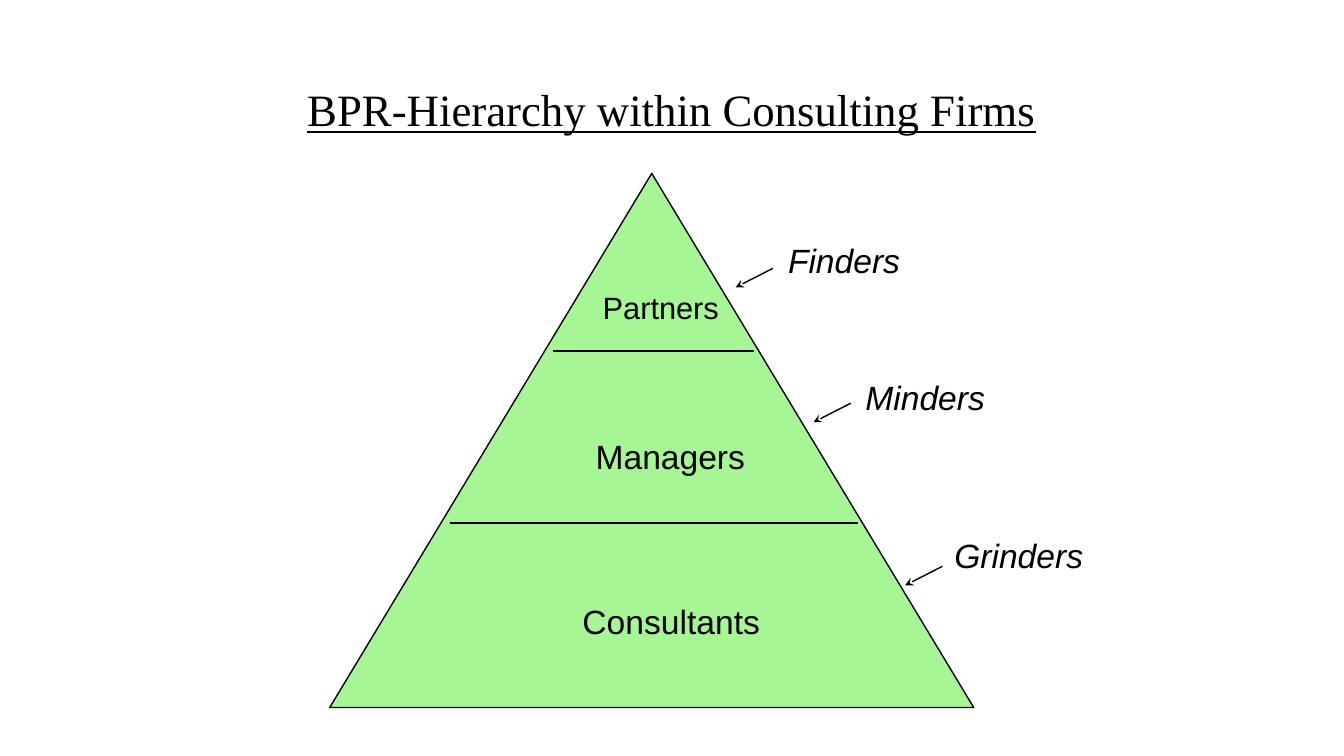
from pptx import Presentation
from pptx.dml.color import RGBColor
from pptx.enum.shapes import MSO_CONNECTOR, MSO_SHAPE
from pptx.enum.text import MSO_ANCHOR, MSO_AUTO_SIZE, PP_ALIGN
from pptx.oxml.ns import qn
from pptx.util import Cm, Pt
from lxml.etree import SubElement

COLORS = {"ink": "000000", "pyramid": "A6F695", "paper": "FFFFFF"}


def write(sp, text, size=24, font="Arial", italic=False, underline=False,
          align=PP_ALIGN.LEFT, anchor=MSO_ANCHOR.TOP, wrap=False,
          fit=MSO_AUTO_SIZE.SHAPE_TO_FIT_TEXT):
    tf = sp.text_frame
    tf.word_wrap, tf.auto_size, tf.vertical_anchor = wrap, fit, anchor
    p = tf.paragraphs[0]
    p.alignment = align
    r = p.add_run()
    r.text = text
    r.font.name, r.font.size = font, Pt(size)
    r.font.italic, r.font.underline = italic, underline
    r.font.color.rgb = RGBColor.from_string(COLORS["ink"])


def add_line(shapes, x1, y1, x2, y2, arrow=False):
    line = shapes.add_connector(MSO_CONNECTOR.STRAIGHT, Cm(x1), Cm(y1), Cm(x2), Cm(y2))
    line.line.width = Pt(1)
    line.line.color.rgb = RGBColor.from_string(COLORS["ink"])
    if arrow:
        SubElement(line.line._get_or_add_ln(), qn("a:tailEnd"), type="stealth")
    SubElement(line._element.spPr, qn("a:effectLst"))


prs = Presentation()
prs.slide_width, prs.slide_height = Cm(33.87), Cm(19.05)
slide = prs.slides.add_slide(prs.slide_layouts[5])
slide.background.fill.solid()
slide.background.fill.fore_color.rgb = RGBColor.from_string(COLORS["paper"])

title = slide.shapes.title
title.left, title.top, title.width, title.height = Cm(4.72), Cm(1.47), Cm(24.41), Cm(2.08)
write(title, "BPR-Hierarchy within Consulting Firms", size=32, font="Times New Roman",
      underline=True, align=PP_ALIGN.CENTER, anchor=MSO_ANCHOR.BOTTOM, wrap=True,
      fit=MSO_AUTO_SIZE.NONE)

pyramid = slide.shapes.add_shape(MSO_SHAPE.ISOSCELES_TRIANGLE,
                                 Cm(8.31), Cm(4.37), Cm(16.23), Cm(13.46))
pyramid.shadow.inherit = False
pyramid.fill.solid()
pyramid.fill.fore_color.rgb = RGBColor.from_string(COLORS["pyramid"])
pyramid.line.color.rgb = RGBColor.from_string(COLORS["ink"])
pyramid.line.width = Pt(1)

for left, right, y in [(13.94, 19, 8.84), (11.33, 21.62, 13.18)]:
    add_line(slide.shapes, left, y, right, y)

levels = [
    ("Partners", 14.94, 7.16, 4.04, 1.19, 22, True),
    ("Managers", 14.76, 10.85, 4.32, 1.27, 24, False),
    ("Consultants", 14.43, 15.01, 5.03, 1.27, 24, False),
]
for text, x, y, width, height, size, wrap in levels:
    box = slide.shapes.add_textbox(Cm(x), Cm(y), Cm(width), Cm(height))
    write(box, text, size=size, wrap=wrap)

# Each role: name, text box left, top, width, then the start of its arrow
roles = [
    ("Finders", 19.61, 5.92, 3.35, 19.48, 6.76),
    ("Minders", 21.56, 9.37, 3.56, 21.44, 10.16),
    ("Grinders", 23.8, 13.36, 3.78, 23.75, 14.27),
]
for text, x, y, width, arrow_x, arrow_y in roles:
    group = slide.shapes.add_group_shape()
    add_line(group.shapes, arrow_x, arrow_y, arrow_x - 0.94, arrow_y + 0.48, arrow=True)
    box = group.shapes.add_textbox(Cm(x), Cm(y), Cm(width), Cm(1.27))
    write(box, text, italic=True)

prs.save("out.pptx")
